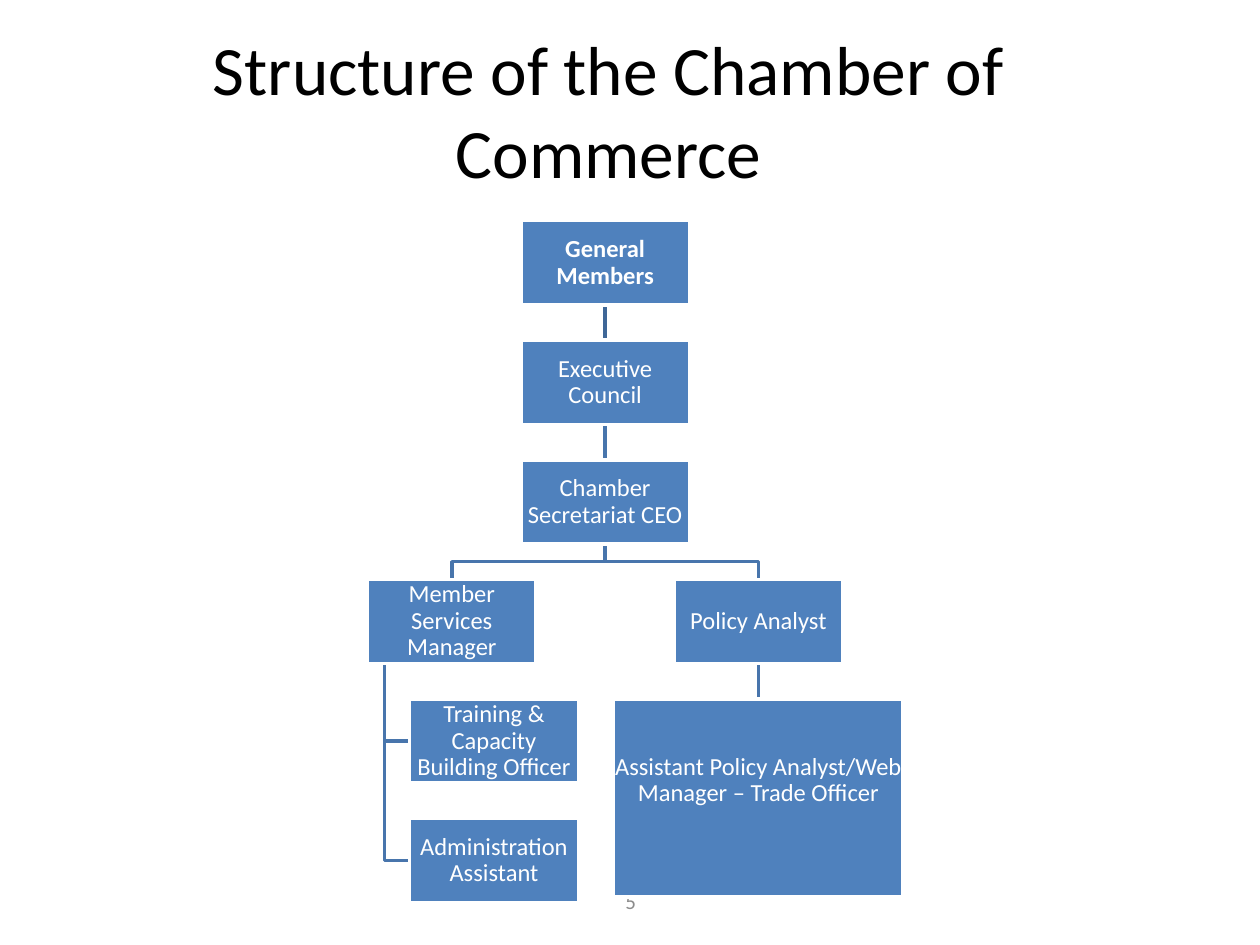
from lxml.etree import SubElement
from pptx import Presentation
from pptx.dml.color import RGBColor
from pptx.enum.shapes import MSO_CONNECTOR as CONN, MSO_SHAPE as SHAPE
from pptx.enum.text import MSO_ANCHOR as ANCHOR, PP_ALIGN as ALIGN
from pptx.oxml.ns import qn
from pptx.util import Cm, Pt

WHITE = RGBColor(0xFF, 0xFF, 0xFF)
BLACK = RGBColor(0x00, 0x00, 0x00)
GREY = RGBColor(0x8C, 0x8C, 0x8C)
BLUE = RGBColor(0x4F, 0x81, 0xBD)
LINE = RGBColor(0x48, 0x75, 0xAC)
TOP_LINE = RGBColor(0x3F, 0x67, 0x97)

BOX_W, BOX_H = 3.4, 1.7
TOP, PITCH = 4.45, 2.41
CENTER, BRANCH = 12.2, 3.09
LEFT, RIGHT = CENTER - BRANCH, CENTER + BRANCH
CHILD_X, SPINE_X = 9.96, 7.75


def row_top(row):
    return TOP + row * PITCH


def write(sp, text, size, color, bold=False):
    tf = sp.text_frame
    tf.word_wrap = True
    tf.vertical_anchor = ANCHOR.MIDDLE
    tf.text = text
    p = tf.paragraphs[0]
    p.alignment = ALIGN.CENTER
    font = p.runs[0].font
    font.name, font.size, font.bold = "Calibri", Pt(size), bold
    font.color.rgb = color
    return p


def add_text(slide, text, x, y, w, h, size, color):
    write(slide.shapes.add_textbox(Cm(x), Cm(y), Cm(w), Cm(h)), text, size, color)


def add_box(slide, text, center, row, w=BOX_W, h=BOX_H, bold=False, bottom=0.02):
    sp = slide.shapes.add_shape(
        SHAPE.RECTANGLE, Cm(center - w / 2), Cm(row_top(row)), Cm(w), Cm(h))
    sp.shadow.inherit = False
    sp.fill.solid()
    sp.fill.fore_color.rgb = BLUE
    sp.line.color.rgb = WHITE
    sp.line.width = Pt(2)
    tf = sp.text_frame
    tf.margin_left = tf.margin_right = tf.margin_top = Cm(0.02)
    tf.margin_bottom = Cm(bottom)
    write(sp, text, 14, WHITE, bold).line_spacing = 0.9
    return sp


def style_line(slide, sp, color):
    sp.line.color.rgb = color
    sp.line.width = Pt(2)
    slide.shapes._spTree.insert(2, sp._element)


def join(slide, upper, lower, color=LINE):
    cx = slide.shapes.add_connector(CONN.STRAIGHT, 0, 0, 0, 0)
    cx.begin_connect(upper, 2)
    cx.end_connect(lower, 0)
    style_line(slide, cx, color)
    SubElement(cx._element.spPr, qn("a:effectLst"))


def add_elbow(slide, *points):
    start, *rest = [(Cm(x), Cm(y)) for x, y in points]
    builder = slide.shapes.build_freeform(*start)
    builder.add_line_segments(rest, close=False)
    sp = builder.convert_to_shape()
    sp.shadow.inherit = False
    sp.fill.background()
    style_line(slide, sp, LINE)


def main():
    prs = Presentation()
    prs.slide_width, prs.slide_height = Cm(25.4), Cm(19.05)
    slide = prs.slides.add_slide(prs.slide_layouts[6])

    add_text(slide, "Structure of the Chamber of Commerce",
             0.84, 0.9, 22.86, 2.62, 39.6, BLACK)
    add_text(slide, "5", 8.69, 17.65, 8.05, 1.02, 12, GREY)

    members = add_box(slide, "General Members", CENTER, 0, bold=True)
    council = add_box(slide, "Executive Council", CENTER, 1)
    ceo = add_box(slide, "Chamber Secretariat CEO", CENTER, 2)
    add_box(slide, "Member Services Manager", LEFT, 3)
    add_box(slide, "Training & Capacity Building Officer", CHILD_X, 4)
    add_box(slide, "Administration Assistant", CHILD_X, 5)
    analyst = add_box(slide, "Policy Analyst", RIGHT, 3)
    assistant = add_box(slide, "Assistant Policy Analyst/Web Manager – Trade Officer",
                        RIGHT, 4, w=5.84, h=3.99, bottom=0.72)

    join(slide, members, council, TOP_LINE)
    join(slide, council, ceo)
    join(slide, analyst, assistant)

    start, end = row_top(2) + BOX_H, row_top(3)
    middle = (start + end) / 2
    for x in (LEFT, RIGHT):
        add_elbow(slide, (CENTER, start), (CENTER, middle), (x, middle), (x, end))
    for row in (4, 5):
        y = row_top(row) + BOX_H / 2
        add_elbow(slide, (SPINE_X, row_top(3) + BOX_H), (SPINE_X, y),
                  (CHILD_X - BOX_W / 2, y))

    prs.save("out.pptx")


if __name__ == "__main__":
    main()
